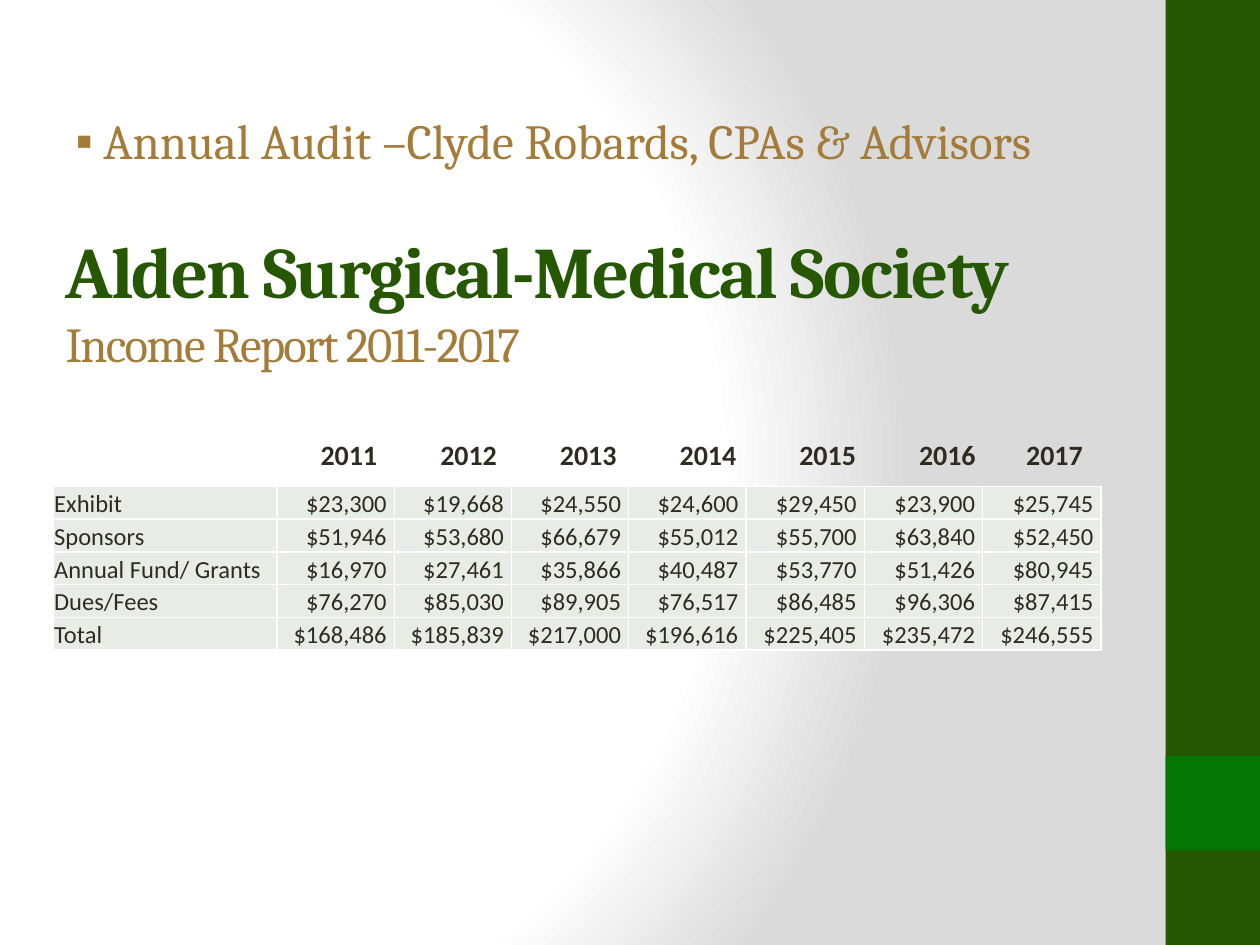
from lxml import etree
from pptx import Presentation
from pptx.dml.color import RGBColor
from pptx.enum.shapes import MSO_SHAPE
from pptx.enum.text import MSO_ANCHOR, MSO_AUTO_SIZE, PP_ALIGN
from pptx.oxml.ns import qn
from pptx.util import Inches, Pt

RECT = MSO_SHAPE.RECTANGLE
TOP, MIDDLE, BOTTOM = MSO_ANCHOR.TOP, MSO_ANCHOR.MIDDLE, MSO_ANCHOR.BOTTOM
LEFT, RIGHT = PP_ALIGN.LEFT, PP_ALIGN.RIGHT
NO_FIT = MSO_AUTO_SIZE.NONE

W, H = 10, 7.5
GREEN, BRIGHT, GOLD, INK = "265804", "047604", "A47B38", "2F2B20"
WHITE, GREY, CELL = "FFFFFF", "DADADA", "E7ECE7"
SERIF, SANS = "Cambria", "Calibri"

YEARS = range(2011, 2018)
YEAR_TABS = [0.42 + 0.95 * i for i in range(6)] + [6.02]
COLUMNS = [1.78] + [0.93] * 4 + [0.94] * 3
ROW_HEIGHT = 0.26
INCOME = [
    ("Exhibit", 23300, 19668, 24550, 24600, 29450, 23900, 25745),
    ("Sponsors", 51946, 53680, 66679, 55012, 55700, 63840, 52450),
    ("Annual Fund/ Grants", 16970, 27461, 35866, 40487, 53770, 51426, 80945),
    ("Dues/Fees", 76270, 85030, 89905, 76517, 86485, 96306, 87415),
    ("Total", 168486, 185839, 217000, 196616, 225405, 235472, 246555),
]


def rgb(value):
    return RGBColor.from_string(value)


def add(parent, tag, **attrs):
    return etree.SubElement(parent, qn(tag), {k: str(v) for k, v in attrs.items()})


def style(r, size, font, color, bold=False):
    r.font.size, r.font.name, r.font.bold = Pt(size), font, bold
    r.font.color.rgb = rgb(color)


def place(sp, left, top, width, height, anchor):
    sp.left, sp.top = Inches(left), Inches(top)
    sp.width, sp.height = Inches(width), Inches(height)
    tf = sp.text_frame
    tf.word_wrap, tf.auto_size, tf.vertical_anchor = True, NO_FIT, anchor
    return tf


def set_background(s):
    """Circular gradient, white in the left part and grey on the right."""
    s.background.fill.gradient()
    grad = s._element.find(".//" + qn("a:gradFill"))
    for child in list(grad):
        grad.remove(child)
    stops = add(grad, "a:gsLst")
    for share, color in ((0, WHITE), (75, WHITE), (100, GREY)):
        add(add(stops, "a:gs", pos=share * 1000), "a:srgbClr", val=color)
    add(add(grad, "a:path", path="circle"), "a:fillToRect",
        l=20000, t=50000, r=100000, b=50000)


def add_block(s, top, height, color):
    width = 0.75
    sp = s.shapes.add_shape(RECT, Inches(W - width), Inches(top),
                            Inches(width), Inches(height))
    sp.shadow.inherit = False
    sp.fill.solid()
    sp.fill.fore_color.rgb = rgb(color)
    sp.line.fill.background()


def set_title(s):
    tf = place(s.shapes.title, 0.42, 1.75, 8.33, 1.25, MIDDLE)
    p = tf.paragraphs[0]
    p.text = "Alden Surgical-Medical Society\vIncome Report 2011-2017"
    p.alignment = LEFT
    name, report = p.runs
    style(name, 41.4, SERIF, GREEN, True)
    style(report, 27.9, SERIF, GOLD)
    for r in p.runs:
        r.font._element.set("spc", "-100")


def set_audit_line(s):
    p = place(s.placeholders[1], 0.5, 0.83, 8.5, 1.04, TOP).paragraphs[0]
    p.text = "Annual Audit –Clyde Robards, CPAs & Advisors"
    p.space_before = Pt(0)
    style(p.runs[0], 28, SERIF, GOLD)
    pPr = p._p.get_or_add_pPr()
    pPr.set("marL", str(Inches(0.22)))
    pPr.set("indent", str(-Inches(0.22)))
    add(pPr, "a:buChar", char="▪")


def add_years(s):
    sp = s.shapes.add_textbox(0, 0, 0, 0)
    p = place(sp, 2.25, 3.42, 6.75, 0.37, TOP).paragraphs[0]
    p.text = "".join(f"\t{year}" for year in YEARS)
    style(p.runs[0], 16, SANS, INK, True)
    tabs = add(p._p.get_or_add_pPr(), "a:tabLst")
    for pos in YEAR_TABS:
        add(tabs, "a:tab", pos=Inches(pos), algn="ctr")


def set_borders(cell):
    tcPr = cell._tc.get_or_add_tcPr()
    for i, side in enumerate("LRTB"):
        ln = add(tcPr, f"a:ln{side}", w=Pt(1))
        add(add(ln, "a:solidFill"), "a:srgbClr", val=WHITE)
        tcPr.insert(i, ln)


def fill_cell(cell, value):
    is_label = isinstance(value, str)
    cell.margin_left = cell.margin_top = Inches(0.01)
    cell.margin_right = Inches(0.01 if is_label else 0.06)
    cell.margin_bottom = 0
    cell.vertical_anchor = BOTTOM
    cell.fill.solid()
    cell.fill.fore_color.rgb = rgb(CELL)
    set_borders(cell)
    p = cell.text_frame.paragraphs[0]
    p.text = value if is_label else f"${value:,}"
    p.alignment = LEFT if is_label else RIGHT
    style(p.runs[0], 14, SANS, INK)


def add_income_table(s):
    rows = len(INCOME)
    table = s.shapes.add_table(rows, len(COLUMNS), Inches(0.42), Inches(3.86),
                               Inches(sum(COLUMNS)), Inches(rows * ROW_HEIGHT)).table
    table.first_row = table.horz_banding = False
    for column, width in zip(table.columns, COLUMNS):
        column.width = Inches(width)
    for row, values in zip(table.rows, INCOME):
        row.height = Inches(ROW_HEIGHT)
        for cell, value in zip(row.cells, values):
            fill_cell(cell, value)


def main():
    prs = Presentation()
    prs.slide_width, prs.slide_height = Inches(W), Inches(H)
    s = prs.slides.add_slide(prs.slide_layouts[1])
    set_background(s)
    add_block(s, 0, H, GREEN)
    add_block(s, 0.8 * H, 0.1 * H, BRIGHT)
    set_title(s)
    set_audit_line(s)
    add_years(s)
    add_income_table(s)
    prs.save("out.pptx")


if __name__ == "__main__":
    main()
